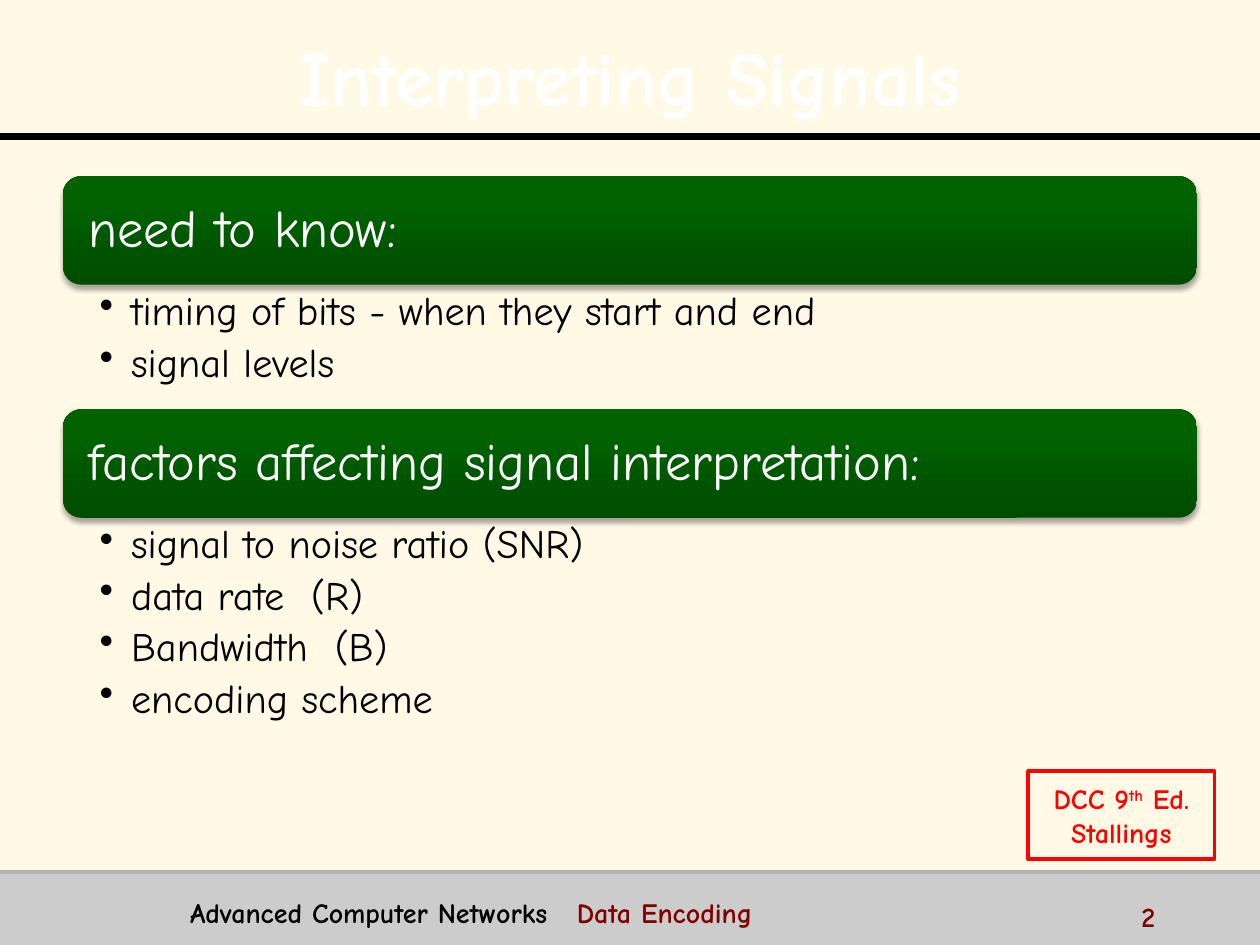
from lxml import etree
from pptx import Presentation, util as u
from pptx.dml.color import RGBColor
from pptx.enum import shapes, text
from pptx.oxml import ns

BLACK, WHITE, RED, MAROON = "000000", "FFFFFF", "FF0000", "800000"
FONT = "Comic Neue"
SECTIONS = [
    (14, "need to know:",
     ["timing of bits - when they start and end", "signal levels"], 9.8),
    (32.5, "factors affecting signal interpretation:",
     ["signal to noise ratio (SNR)", "data rate  (R)", "Bandwidth  (B)", "encoding scheme"], 19.7),
]


def color(code):
    """Turn a hex string into a colour."""
    return RGBColor.from_string(code)


def element(parent, tag, **attributes):
    """Add a drawing element with attributes to its parent."""
    values = {name: str(value) for name, value in attributes.items()}
    return etree.SubElement(parent, ns.qn("a:" + tag), values)


def add_shadow(effects, blur, distance, angle, alpha):
    """Add a black outer shadow to an effect list."""
    shadow = element(effects, "outerShdw", blurRad=u.Pt(blur), dist=u.Pt(distance),
                     dir=angle * 60000, algn="ctr", rotWithShape=0)
    element(element(shadow, "srgbClr", val=BLACK), "alpha", val=alpha * 1000)


def add_text(para, words, size=16, fill=BLACK, bold=False, raised=False, shadow=False):
    """Add a formatted span of text to a paragraph."""
    span = para.add_run()
    span.text = words
    font = span.font
    font.name, font.size, font.bold = FONT, u.Pt(size), bold
    font.color.rgb = color(fill)
    properties = span._r.get_or_add_rPr()
    if raised:
        properties.set("baseline", "30000")
    if shadow:
        effects = etree.Element(ns.qn("a:effectLst"))
        properties.insert(list(properties).index(properties.solidFill) + 1, effects)
        add_shadow(effects, 0, 2, 45, 100)
    return span


class Page:
    """Hold the deck and its current slide on a grid of 100 columns by 75 rows."""

    def __init__(self, background):
        """Start a deck with one blank slide."""
        self.deck = Presentation()
        self.deck.slide_width, self.deck.slide_height = u.Inches(10), u.Inches(7.5)
        self.slide = self.deck.slides.add_slide(self.deck.slide_layouts[6])
        self.slide.background.fill.solid()
        self.slide.background.fill.fore_color.rgb = color(background)

    def grid(self, *cells):
        """Convert grid cells to lengths."""
        return [u.Inches(cell / 10) for cell in cells]

    def text_box(self, *area, margins=(1, 0.5, 1, 0.5), anchor=text.MSO_ANCHOR.TOP):
        """Add a wrapping text box and return its frame."""
        box = self.slide.shapes.add_textbox(*self.grid(*area))
        return self.set_frame(box, margins, anchor)

    def set_frame(self, box, margins, anchor):
        """Set the wrapping, margins and anchor of a shape's text."""
        frame = box.text_frame
        frame.word_wrap, frame.vertical_anchor = True, anchor
        (frame.margin_left, frame.margin_top,
         frame.margin_right, frame.margin_bottom) = self.grid(*margins)
        return frame

    def block(self, *area, kind=shapes.MSO_SHAPE.RECTANGLE, fill=None, line=None):
        """Add a preset shape with a flat fill or an outline."""
        box = self.slide.shapes.add_shape(kind, *self.grid(*area))
        box.shadow.inherit = False
        if fill:
            box.fill.solid()
            box.fill.fore_color.rgb = color(fill)
        else:
            box.fill.background()
        if line:
            box.line.color.rgb, box.line.width = color(line), u.Pt(2)
        else:
            box.line.fill.background()
        return box

    def rule(self, row, fill, width):
        """Draw a line across the whole slide."""
        line = self.slide.shapes.add_connector(
            shapes.MSO_CONNECTOR.STRAIGHT, *self.grid(0, row, 100, row))
        line.line.color.rgb, line.line.width = color(fill), u.Pt(width)
        element(line._element.spPr, "effectLst")

    def title(self, words):
        """Add the slide title."""
        para = self.text_box(2, 1.3, 96.1, 8.7, anchor=text.MSO_ANCHOR.MIDDLE).paragraphs[0]
        para.alignment, para.line_spacing = text.PP_ALIGN.CENTER, 1.1
        add_text(para, words, size=44, fill=WHITE, bold=True, shadow=True)

    def banner(self, row, words):
        """Add a green section heading."""
        box = self.block(5, row, 90, 8.6, kind=shapes.MSO_SHAPE.ROUNDED_RECTANGLE)
        box.fill.gradient()
        box.fill.gradient_angle = 90
        for stop, position, code in zip(box.fill.gradient_stops, (0, 0.8), ("004C00", "006300")):
            stop.position, stop.color.rgb = position, color(code)
        add_shadow(box._element.spPr.find(ns.qn("a:effectLst")), 3.1, 1.8, 90, 35)
        frame = self.set_frame(box, (1.6, 1.2, 1.6, 1.2), text.MSO_ANCHOR.MIDDLE)
        para = frame.paragraphs[0]
        para.alignment, para.line_spacing = text.PP_ALIGN.LEFT, 0.9
        add_text(para, words, size=30, fill=WHITE)

    def bullets(self, row, height, items):
        """Add a bulleted list."""
        frame = self.text_box(5, row, 90, height, margins=(2.9, 0.4, 2.3, 0.4))
        for index, words in enumerate(items):
            para = frame.add_paragraph() if index else frame.paragraphs[0]
            para.level, para.line_spacing, para.space_after = 1, 0.9, u.Pt(4.6)
            properties = para._p.get_or_add_pPr()
            properties.set("marL", str(u.Inches(0.25)))
            properties.set("indent", str(u.Inches(-0.25)))
            element(properties, "buChar", char="•")
            add_text(para, words, size=23)

    def source(self):
        """Add the outlined book reference."""
        box = self.block(81.6, 61.2, 14.8, 7, line=RED)
        frame = self.set_frame(box, (1, 0.5, 1, 0.5), text.MSO_ANCHOR.MIDDLE)
        first, second = frame.paragraphs[0], frame.add_paragraph()
        first.alignment = second.alignment = text.PP_ALIGN.CENTER
        for para, words, raised in ((first, "DCC 9", False), (first, "th", True),
                                    (first, " Ed.", False), (second, "Stallings", False)):
            add_text(para, words, fill=RED, bold=True, raised=raised)

    def footer(self, course, topic, number):
        """Add the course, topic and page number."""
        para = self.text_box(14.1, 70.6, 72.8, 3.1).paragraphs[0]
        tabs = element(para._p.get_or_add_pPr(), "tabLst")
        element(tabs, "tab", pos=u.Inches(3.07), algn="l")
        add_text(para, course + "\t", bold=True)
        add_text(para, topic, fill=MAROON, bold=True)
        para = self.text_box(89.6, 70.9, 10, 2.5).paragraphs[0]
        add_text(para, number, fill=MAROON, bold=True)


def main():
    """Build the slide and save it."""
    page = Page("FFF9E6")
    page.block(0, 69.2, 100, 5.8, fill="CCCCCC")
    page.rule(10.8, BLACK, 4)
    page.rule(69.2, "B2B2B2", 2)
    page.title("Interpreting Signals")
    for row, heading, items, height in SECTIONS:
        page.banner(row, heading)
        page.bullets(row + 8.7, height, items)
    page.source()
    page.footer("Advanced Computer Networks", "Data Encoding", "2")
    page.deck.save("out.pptx")


if __name__ == "__main__":
    main()
